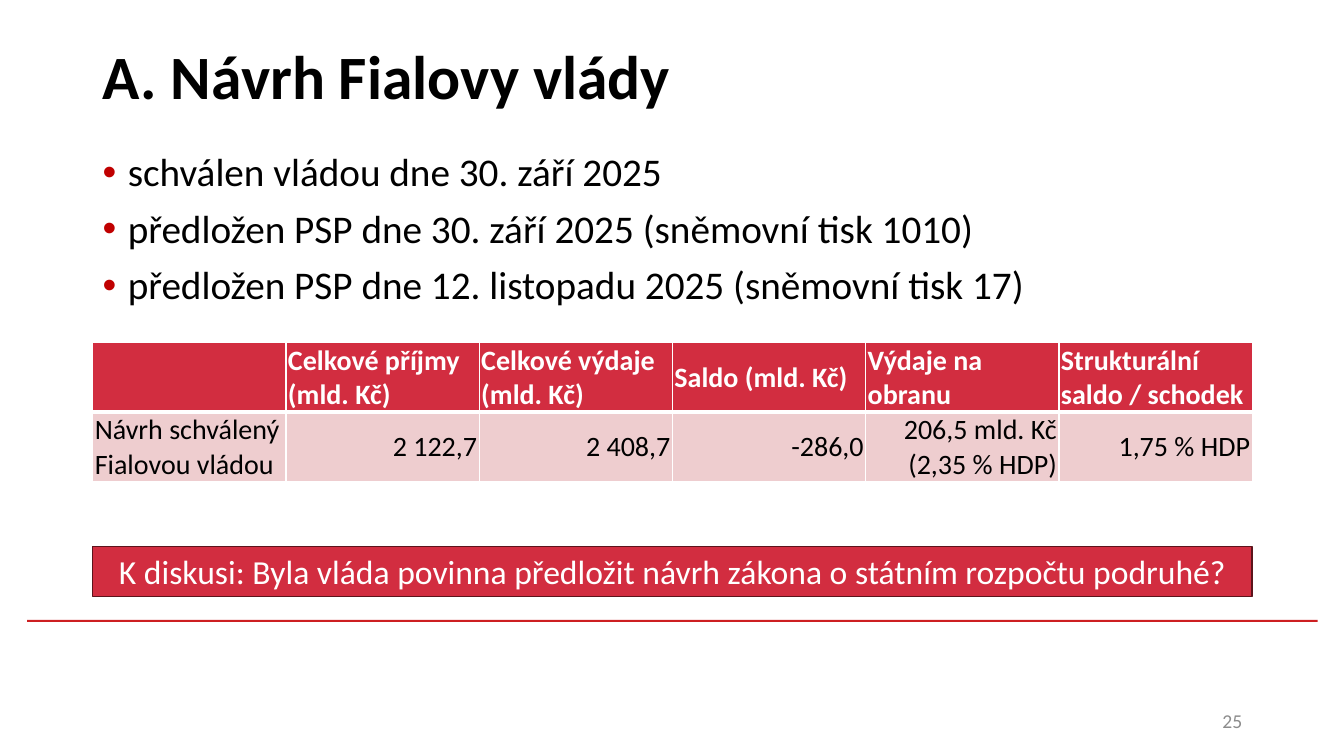
"""Build the slide on the government's budget proposal."""
from pptx import Presentation
from pptx import util as u
from pptx.dml.color import RGBColor
from pptx.enum import shapes, text
from pptx.oxml import parse_xml
from pptx.oxml.ns import nsdecls

COLORS = {
    "black": "000000", "white": "FFFFFF", "gray": "8C8C8C", "rule": "CD1F21",
    "red": "D22D40", "pink": "EECDCF", "outline": "5C141C", "bullet": "C00000",
}
LEFT, WIDTH = 0.92, 11.5
BULLETS = [
    "schválen vládou dne 30. září 2025",
    "předložen PSP dne 30. září 2025 (sněmovní tisk 1010)",
    "předložen PSP dne 12. listopadu 2025 (sněmovní tisk 17)",
]
BUDGET = [
    ["", "Celkové příjmy (mld. Kč)", "Celkové výdaje (mld. Kč)",
     "Saldo (mld. Kč)", "Výdaje na obranu", "Strukturální saldo / schodek"],
    ["Návrh schválený Fialovou vládou", "2 122,7", "2 408,7", "-286,0",
     "206,5 mld. Kč (2,35 % HDP)", "1,75 % HDP"],
]


def rgb(name):
    return RGBColor.from_string(COLORS[name])


def box(left, top, width, height):
    return [u.Inches(value) for value in (left, top, width, height)]


def write(paragraph, words, size, color, bold=False, align=text.PP_ALIGN.LEFT):
    paragraph.alignment = align
    run = paragraph.add_run()
    run.text = words
    run.font.name = "Calibri"
    run.font.size = u.Pt(size)
    run.font.bold = bold
    run.font.color.rgb = rgb(color)


def add_title(slide, words):
    title = slide.shapes.title
    title.left, title.top, title.width, title.height = box(LEFT, 0.02, WIDTH, 1.45)
    title.text_frame.vertical_anchor = text.MSO_ANCHOR.MIDDLE
    title.text_frame.auto_size = text.MSO_AUTO_SIZE.NONE
    write(title.text_frame.paragraphs[0], words, 44, "black", bold=True)


def add_text_box(slide, place):
    frame = slide.shapes.add_textbox(*box(*place)).text_frame
    frame.word_wrap = True
    return frame


def add_bullets(slide, lines):
    frame = add_text_box(slide, (LEFT, 1.47, WIDTH, 1.8))
    for index, line in enumerate(lines):
        paragraph = frame.add_paragraph() if index else frame.paragraphs[0]
        properties = paragraph._p.get_or_add_pPr()
        properties.set("marL", str(u.Inches(0.25)))
        properties.set("indent", str(u.Inches(-0.25)))
        for element in (
            f'<a:buClr {nsdecls("a")}><a:srgbClr val="{COLORS["bullet"]}"/></a:buClr>',
            f'<a:buFont {nsdecls("a")} typeface="Arial"/>',
            f'<a:buChar {nsdecls("a")} char="•"/>',
        ):
            properties.append(parse_xml(element))
        paragraph.line_spacing = 0.9
        if index:
            paragraph.space_before = u.Pt(10)
        write(paragraph, line, 28, "black")


def add_rectangle(slide, place, fill, outline=None):
    shape = slide.shapes.add_shape(shapes.MSO_SHAPE.RECTANGLE, *box(*place))
    shape.shadow.inherit = False
    shape.fill.solid()
    shape.fill.fore_color.rgb = rgb(fill)
    if outline:
        shape.line.color.rgb = rgb(outline)
        shape.line.width = u.Pt(1)
    else:
        shape.line.fill.background()
    return shape


def add_borders(cell, bottom, top):
    properties = cell._tc.get_or_add_tcPr()
    for side, points in (("L", 1), ("R", 1), ("T", top), ("B", bottom)):
        properties.append(parse_xml(
            f'<a:ln{side} {nsdecls("a")} w="{u.Pt(points)}"><a:solidFill>'
            f'<a:srgbClr val="{COLORS["white"]}"/></a:solidFill></a:ln{side}>'))


def format_cell(cell, words, is_header, is_label):
    add_borders(cell, bottom=3 if is_header else 1, top=1 if is_header else 3)
    cell.fill.solid()
    cell.fill.fore_color.rgb = rgb("red" if is_header else "pink")
    cell.vertical_anchor = text.MSO_ANCHOR.MIDDLE
    cell.margin_left = cell.margin_right = u.Inches(0.02)
    cell.margin_top = cell.margin_bottom = u.Inches(0.01)
    if words:
        align = text.PP_ALIGN.LEFT if is_header or is_label else text.PP_ALIGN.RIGHT
        write(cell.text_frame.paragraphs[0], words, 20,
              "white" if is_header else "black", is_header, align)


def add_budget_table(slide, rows):
    place = box(LEFT, 3.4, WIDTH, 1.38)
    table = slide.shapes.add_table(len(rows), len(rows[0]), *place).table
    for row_index, row in enumerate(rows):
        for column_index, words in enumerate(row):
            format_cell(table.cell(row_index, column_index), words,
                        row_index == 0, column_index == 0)


def add_question(slide, words):
    shape = add_rectangle(slide, (LEFT, 5.42, WIDTH, 0.5), "red", "outline")
    shape.text_frame.word_wrap = True
    shape.text_frame.vertical_anchor = text.MSO_ANCHOR.MIDDLE
    write(shape.text_frame.paragraphs[0], words, 24, "white",
          align=text.PP_ALIGN.CENTER)


def add_page_number(slide, number):
    frame = add_text_box(slide, (9.42, 6.95, 3, 0.4))
    frame.vertical_anchor = text.MSO_ANCHOR.MIDDLE
    write(frame.paragraphs[0], number, 14, "gray", align=text.PP_ALIGN.RIGHT)


def main():
    presentation = Presentation()
    presentation.slide_width = u.Inches(13.33)
    presentation.slide_height = u.Inches(7.5)
    slide = presentation.slides.add_slide(presentation.slide_layouts[5])
    add_rectangle(slide, (0.27, 6.15, 12.8, 0.02), "rule")
    add_title(slide, "A. Návrh Fialovy vlády")
    add_bullets(slide, BULLETS)
    add_page_number(slide, "25")
    add_budget_table(slide, BUDGET)
    add_question(slide, "K diskusi: Byla vláda povinna předložit návrh zákona "
                        "o státním rozpočtu podruhé?")
    presentation.save("out.pptx")


if __name__ == "__main__":
    main()
